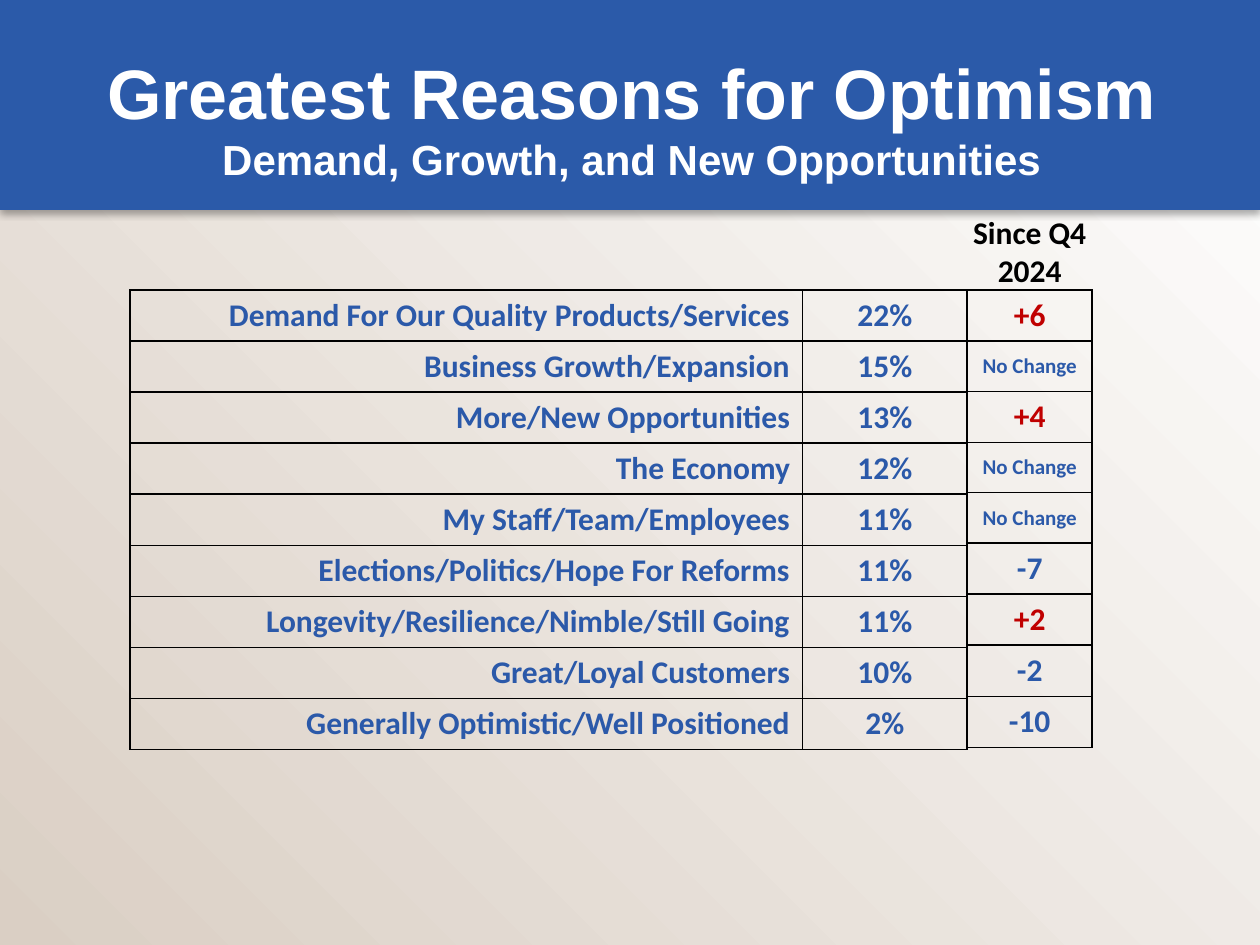
from lxml import etree
from pptx import Presentation, util as u
from pptx.dml.color import RGBColor
from pptx.enum import shapes, text
from pptx.oxml import ns

COLORS = {
    "band": "2B5AA9",
    "text": "2B59A9",
    "rise": "C00000",
    "sand": "DACFC4",
    "white": "FFFFFF",
    "black": "000000",
}
TITLE = {"name": "Arial", "size": u.Pt(40), "bold": True}
SUBTITLE = {**TITLE, "size": u.Pt(24)}
BODY = {"name": "Calibri", "size": u.Pt(18), "bold": True}
SMALL = {**BODY, "size": u.Pt(12)}
FRAME = {
    "word_wrap": True,
    "auto_size": text.MSO_AUTO_SIZE.NONE,
    **{f"margin_{side}": u.Pt(3.6) for side in ("left", "top", "right", "bottom")},
}
BOX_NAMES = ("left", "top", "width", "height")
LEFT, CENTER, RIGHT = text.PP_ALIGN.LEFT, text.PP_ALIGN.CENTER, text.PP_ALIGN.RIGHT

REASONS = [
    ("Demand For Our Quality Products/Services", "22%", "+6"),
    ("Business Growth/Expansion", "15%", "No Change"),
    ("More/New Opportunities", "13%", "+4"),
    ("The Economy", "12%", "No Change"),
    ("My Staff/Team/Employees", "11%", "No Change"),
    ("Elections/Politics/Hope For Reforms", "11%", "-7"),
    ("Longevity/Resilience/Nimble/Still Going", "11%", "+2"),
    ("Great/Loyal Customers", "10%", "-2"),
    ("Generally Optimistic/Well Positioned", "2%", "-10"),
]


def rgb(color):
    return RGBColor.from_string(COLORS[color])


def points(box):
    return [u.Pt(length) for length in box]


def apply_format(target, values):
    for name, value in values.items():
        setattr(target, name, value)


def add_text(paragraph, words, values, color):
    run = paragraph.add_run()
    run.text = words
    apply_format(run.font, values)
    run.font.color.rgb = rgb(color)


def add_xml(parent, markup):
    parent.append(etree.fromstring(markup.replace(">", f" {ns.nsdecls('a')}>", 1)))


def paint_background(slide):
    fill = slide.background.fill
    fill.gradient()
    fill.gradient_angle = 45
    for stop, color in zip(fill.gradient_stops, ("sand", "white")):
        stop.color.rgb = rgb(color)


def add_band(slide, box):
    band = slide.shapes.add_shape(shapes.MSO_SHAPE.RECTANGLE, *points(box))
    band.fill.solid()
    band.fill.fore_color.rgb = rgb("band")
    band.line.fill.background()
    add_xml(
        band.element.spPr,
        f'<a:effectLst><a:outerShdw blurRad="{u.Pt(4)}" dist="{u.Pt(2.2)}" dir="5400000">'
        f'<a:srgbClr val="{COLORS["black"]}"><a:alpha val="32000"/></a:srgbClr>'
        "</a:outerShdw></a:effectLst>",
    )
    slide.shapes.element.insert(2, band.element)


def place_title(slide, box):
    title = slide.shapes.title
    apply_format(title, dict(zip(BOX_NAMES, points(box))))
    apply_format(title.text_frame, {**FRAME, "vertical_anchor": text.MSO_ANCHOR.MIDDLE})
    paragraph = title.text_frame.paragraphs[0]
    paragraph.alignment = CENTER
    add_text(paragraph, "Greatest Reasons for Optimism", TITLE, "white")
    paragraph.add_line_break()
    add_text(paragraph, "Demand, Growth, and New Opportunities", SUBTITLE, "white")


def fill_cell(cell, words, alignment):
    properties = cell._tc.get_or_add_tcPr()
    for side in "LRTB":
        add_xml(
            properties,
            f'<a:ln{side} w="{u.Pt(1)}"><a:solidFill><a:srgbClr val="{COLORS["black"]}"/>'
            f"</a:solidFill></a:ln{side}>",
        )
    cell.fill.background()
    cell.vertical_anchor = text.MSO_ANCHOR.MIDDLE
    paragraph = cell.text_frame.paragraphs[0]
    paragraph.alignment = alignment
    values = SMALL if words == "No Change" else BODY
    add_text(paragraph, words, values, "rise" if words.startswith("+") else "text")


def add_grid(slide, box, rows, widths, alignments):
    frame = slide.shapes.add_table(len(rows), len(widths), *points(box))
    table = frame.table
    apply_format(table, {"first_row": False, "horz_banding": False})
    for column, width in zip(table.columns, widths):
        column.width = u.Pt(width)
    for row, values in zip(table.rows, rows):
        row.height = u.Pt(box[3] / len(rows))
        for cell, words, alignment in zip(row.cells, values, alignments):
            fill_cell(cell, words, alignment)


def add_change_heading(slide, box):
    heading = slide.shapes.add_textbox(*points(box))
    apply_format(heading.text_frame, FRAME)
    paragraph = heading.text_frame.paragraphs[0]
    paragraph.alignment = CENTER
    add_text(paragraph, "Since Q4 2024", BODY, "black")


def main():
    presentation = Presentation()
    presentation.slide_width, presentation.slide_height = u.Pt(720), u.Pt(540)
    slide = presentation.slides.add_slide(presentation.slide_layouts[5])
    paint_background(slide)
    add_band(slide, (0, 0, 720, 120))
    place_title(slide, (28, 21.6, 666, 90))

    left, top, height = 74.3, 165.6, 259.2
    widths = (384.4, 94)
    change_left, change_width = left + sum(widths), 71.4
    shares = [row[:2] for row in REASONS]
    changes = [row[2:] for row in REASONS]
    add_grid(slide, (left, top, sum(widths), height), shares, widths, (RIGHT, CENTER))
    add_grid(slide, (change_left, top, change_width, height), changes, (change_width,), (CENTER,))
    add_change_heading(slide, (change_left - 7.8, 118, change_width + 15.6, 51))
    presentation.save("out.pptx")


if __name__ == "__main__":
    main()
